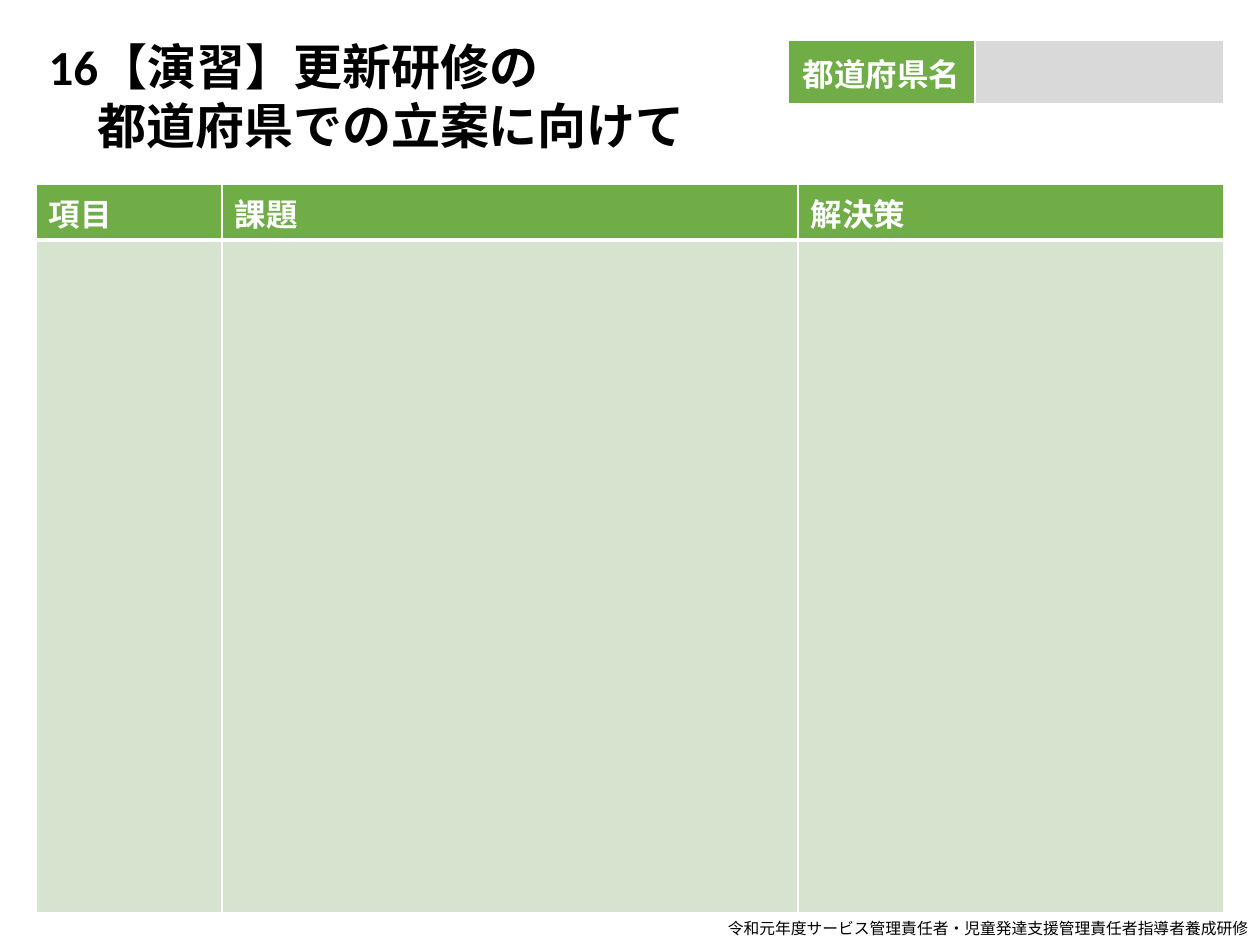
import dataclasses

import pptx
import pptx.dml.color
import pptx.enum.text
import pptx.oxml
import pptx.oxml.ns
import pptx.util

EMU_PER_PX = 914400 // 126
ALIGN = pptx.enum.text.PP_ALIGN
ANCHOR = pptx.enum.text.MSO_ANCHOR


@dataclasses.dataclass(frozen=True)
class Theme:
    font: str = "Calibri"
    text: str = "000000"
    light: str = "FFFFFF"
    header: str = "70AD47"
    body: str = "D5E3CF"
    entry: str = "D9D9D9"
    title_size: int = 28
    table_size: int = 18
    footer_size: int = 9
    thin: int = 1
    thick: int = 3


THEME = Theme()


def px(length):
    return pptx.util.Emu(length * EMU_PER_PX)


def color(value):
    return pptx.dml.color.RGBColor.from_string(value)


def write_text(frame, text, *, size, fill=THEME.text, bold=False,
               align=ALIGN.LEFT, anchor=ANCHOR.TOP):
    """Fill a text frame, one paragraph for each line of text."""
    frame.word_wrap = True
    frame.vertical_anchor = anchor
    frame.text = text
    for paragraph in frame.paragraphs:
        paragraph.alignment = align
        font = paragraph.runs[0].font
        font.name = THEME.font
        font.size = pptx.util.Pt(size)
        font.bold = bold
        font.color.rgb = color(fill)


def add_title(slide, text, left, top, width, height):
    title = slide.shapes.title
    title.left, title.top = px(left), px(top)
    title.width, title.height = px(width), px(height)
    write_text(title.text_frame, text, size=THEME.title_size, bold=True)
    title.text_frame.auto_size = pptx.enum.text.MSO_AUTO_SIZE.NONE


def add_footer(slide, text, left, top, width, height):
    box = slide.shapes.add_textbox(px(left), px(top), px(width), px(height))
    write_text(box.text_frame, text, size=THEME.footer_size, align=ALIGN.RIGHT)


def set_borders(cell, top, bottom):
    """Draw light lines around a cell; they precede its fill in the XML."""
    properties = cell._tc.get_or_add_tcPr()
    widths = {"L": THEME.thin, "R": THEME.thin, "T": top, "B": bottom}
    for side, width in widths.items():
        properties.append(pptx.oxml.parse_xml(
            f'<a:ln{side} {pptx.oxml.ns.nsdecls("a")} w="{pptx.util.Pt(width)}">'
            f'<a:solidFill><a:srgbClr val="{THEME.light}"/></a:solidFill>'
            f'</a:ln{side}>'))


def add_table(slide, left, top, columns, rows):
    """Add a bordered table with the given column widths and row heights."""
    table = slide.shapes.add_table(
        len(rows), len(columns), px(left), px(top),
        px(sum(columns)), px(sum(rows))).table
    for column, width in zip(table.columns, columns):
        column.width = px(width)
    for row, height in zip(table.rows, rows):
        row.height = px(height)
    # A thick line runs below the first row
    for index, row in enumerate(table.rows):
        for cell in row.cells:
            set_borders(cell,
                        top=THEME.thick if index == 1 else THEME.thin,
                        bottom=THEME.thick if index == 0 else THEME.thin)
    return table


def fill_cell(cell, fill, text="", **text_format):
    cell.fill.solid()
    cell.fill.fore_color.rgb = color(fill)
    if text:
        anchor = text_format.pop("anchor", ANCHOR.TOP)
        write_text(cell.text_frame, text, size=THEME.table_size,
                   fill=THEME.light, bold=True, **text_format)
        cell.vertical_anchor = anchor


def add_prefecture_table(slide):
    table = add_table(slide, 788, 40, columns=[187, 249], rows=[65])
    fill_cell(table.cell(0, 0), THEME.header, "都道府県名",
              align=ALIGN.CENTER, anchor=ANCHOR.MIDDLE)
    fill_cell(table.cell(0, 1), THEME.entry)


def add_worksheet_table(slide):
    table = add_table(slide, 36, 184, columns=[186, 576, 426], rows=[56, 673])
    for index, heading in enumerate(["項目", "課題", "解決策"]):
        fill_cell(table.cell(0, index), THEME.header, heading)
        fill_cell(table.cell(1, index), THEME.body)


def main():
    presentation = pptx.Presentation()
    presentation.slide_width, presentation.slide_height = px(1260), px(945)
    slide = presentation.slides.add_slide(presentation.slide_layouts[5])

    # Heading and footer
    add_title(slide, "16【演習】更新研修の\n　都道府県での立案に向けて", 36, 30, 699, 131)
    add_footer(slide, "令和元年度サービス管理責任者・児童発達支援管理責任者指導者養成研修",
               656, 913, 604, 32)

    # Tables to fill in
    add_prefecture_table(slide)
    add_worksheet_table(slide)

    presentation.save("out.pptx")


if __name__ == "__main__":
    main()
